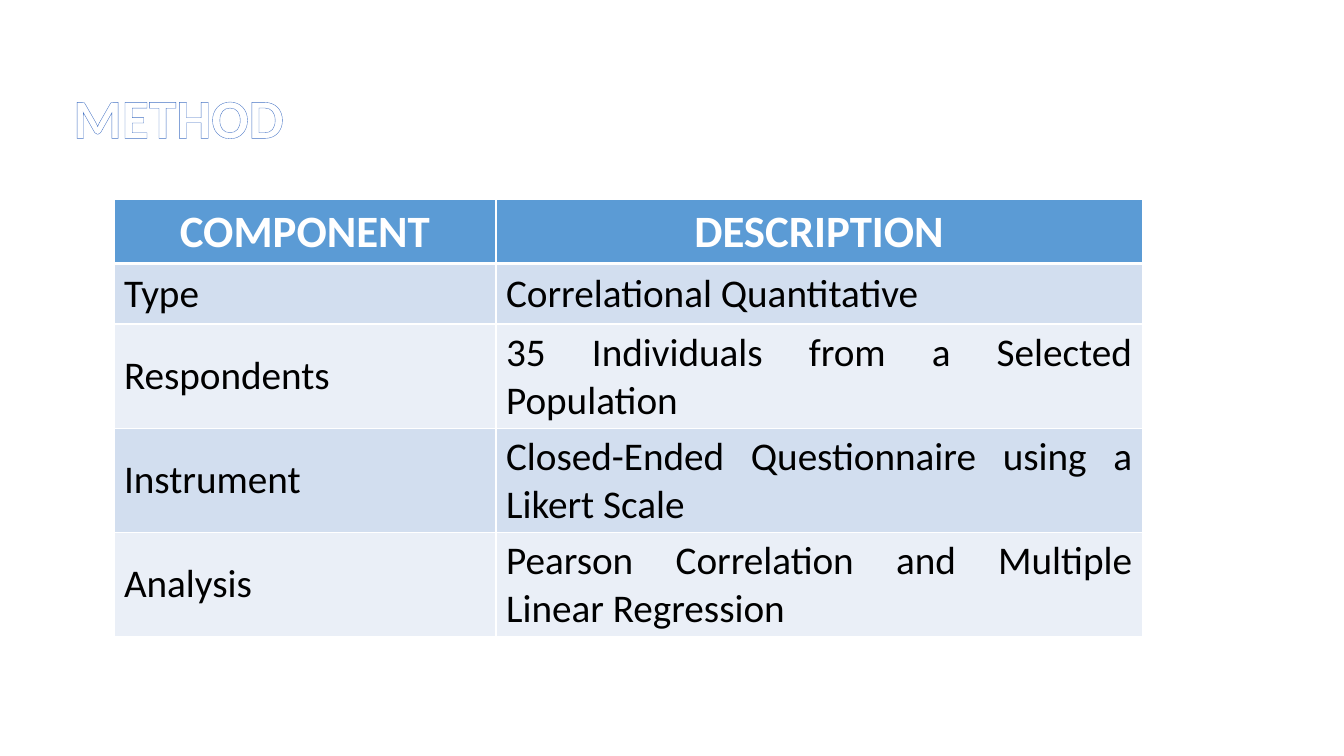
from dataclasses import dataclass

from lxml import etree
from pptx import Presentation
from pptx.dml.color import RGBColor
from pptx.enum.text import MSO_ANCHOR, PP_ALIGN
from pptx.oxml.ns import qn
from pptx.util import Inches, Pt

MIDDLE = MSO_ANCHOR.MIDDLE
LEFT, CENTER, JUSTIFY = PP_ALIGN.LEFT, PP_ALIGN.CENTER, PP_ALIGN.JUSTIFY


@dataclass(frozen=True)
class Theme:
    font: str = "Calibri"
    white: str = "FFFFFF"
    black: str = "000000"
    edge: str = "4472C4"
    head: str = "5B9BD5"
    bands: tuple = ("D2DEEF", "EAEFF7")
    title: float = 39.6
    label: float = 32
    body: float = 28


THEME = Theme()
WIDTHS = (3.79, 6.41)
HEIGHTS = (0.6, 0.6, 1.03, 1.03, 1.03)
ROWS = (
    ("COMPONENT", "DESCRIPTION"),
    ("Type", "Correlational Quantitative"),
    ("Respondents", "35 Individuals from a Selected Population"),
    ("Instrument", "Closed-Ended Questionnaire using a Likert Scale"),
    ("Analysis", "Pearson Correlation and Multiple Linear Regression"),
)


def set_text(frame, text, size, color, bold, align):
    frame.text = text
    para = frame.paragraphs[0]
    para.alignment = align
    font = para.runs[0].font
    font.name, font.size, font.bold = THEME.font, Pt(size), bold
    font.color.rgb = RGBColor.from_string(color)
    return para


def make_line(tag, color, width):
    line = etree.Element(qn(tag), w=str(Pt(width)))
    fill = etree.SubElement(line, qn("a:solidFill"))
    etree.SubElement(fill, qn("a:srgbClr"), val=color)
    return line


def add_title(slide, text):
    box = slide.shapes.add_textbox(
        Inches(0.63), Inches(0.88), Inches(11.5), Inches(0.63)
    )
    frame = box.text_frame
    frame.word_wrap = True
    frame.vertical_anchor = MIDDLE
    para = set_text(frame, text, THEME.title, THEME.white, True, LEFT)
    para.line_spacing = 0.9
    props = para.runs[0].font._element
    props.insert(0, make_line("a:ln", THEME.edge, 0.8))


def style_cell(cell, row, col, text):
    head = row == 0
    set_text(
        cell.text_frame,
        text,
        THEME.label if head else THEME.body,
        THEME.white if head else THEME.black,
        head,
        CENTER if head else (LEFT, JUSTIFY)[col],
    )
    cell.vertical_anchor = MIDDLE
    props = cell._tc.get_or_add_tcPr()
    thick = {(0, "B"), (1, "T")}
    for side in "LRTB":
        width = 3 if (row, side) in thick else 1
        props.append(make_line(f"a:ln{side}", THEME.white, width))
    cell.fill.solid()
    color = THEME.head if head else THEME.bands[(row - 1) % 2]
    cell.fill.fore_color.rgb = RGBColor.from_string(color)


def add_grid(slide, rows):
    table = slide.shapes.add_table(
        len(rows), len(WIDTHS), Inches(1.13), Inches(1.98),
        Inches(sum(WIDTHS)), Inches(sum(HEIGHTS)),
    ).table
    for col, width in zip(table.columns, WIDTHS):
        col.width = Inches(width)
    for row, height in zip(table.rows, HEIGHTS):
        row.height = Inches(height)
    for row, texts in enumerate(rows):
        for col, text in enumerate(texts):
            style_cell(table.cell(row, col), row, col, text)


def main():
    deck = Presentation()
    deck.slide_width, deck.slide_height = Inches(13.33), Inches(7.5)
    slide = deck.slides.add_slide(deck.slide_layouts[6])
    add_title(slide, "METHOD")
    add_grid(slide, ROWS)
    deck.save("out.pptx")


if __name__ == "__main__":
    main()
